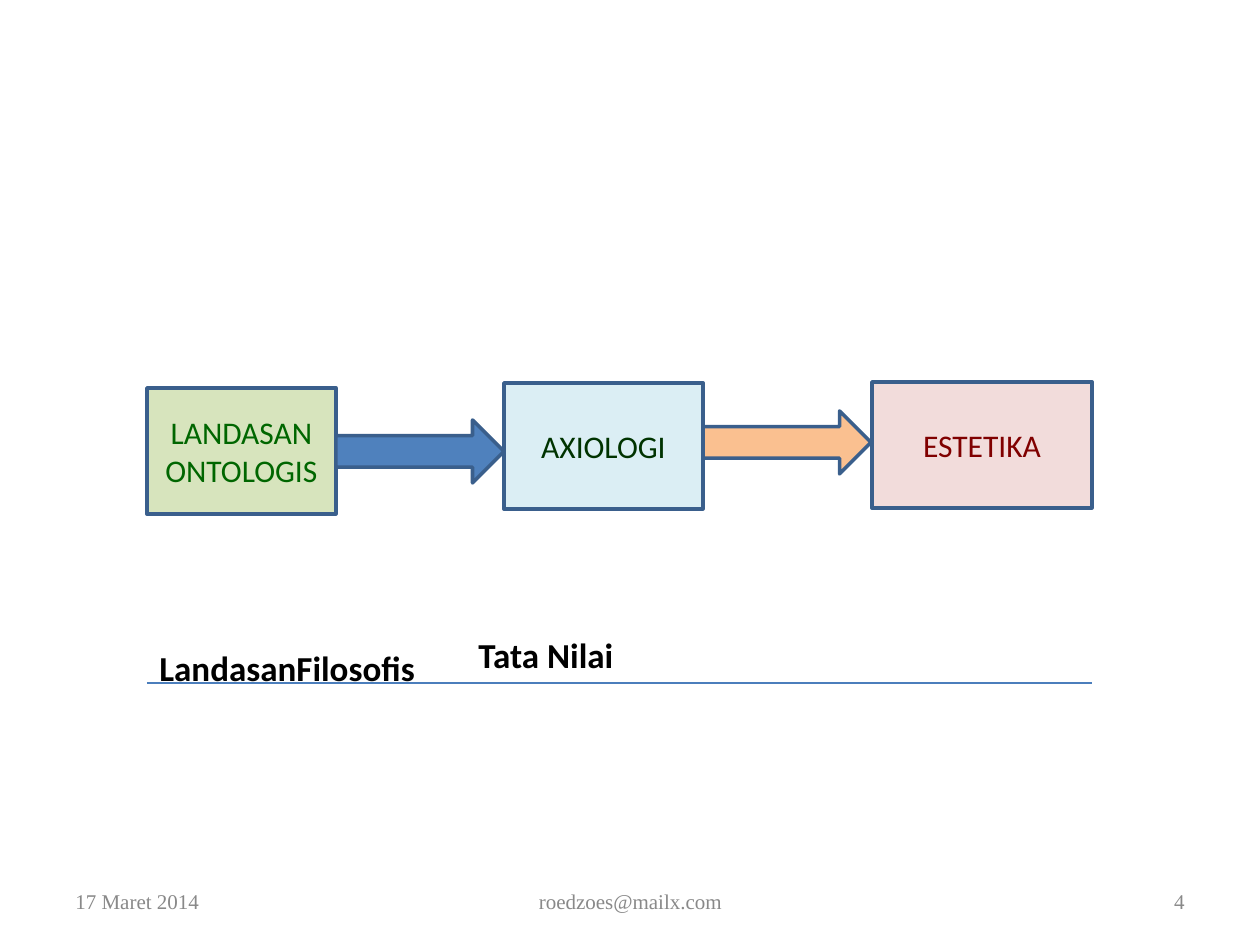
"""Build the slide on the ontological, axiological and aesthetic foundations."""
from lxml.etree import SubElement
from pptx import Presentation
from pptx.dml.color import RGBColor
from pptx.enum.shapes import MSO_CONNECTOR, MSO_SHAPE
from pptx.enum.text import MSO_ANCHOR, MSO_AUTO_SIZE, PP_ALIGN
from pptx.oxml.ns import qn
from pptx.util import Emu, Pt

PX = 914400 / 126
OUTLINE = RGBColor(0x3A, 0x5F, 0x8C)
RULE = RGBColor(0x4B, 0x7E, 0xBC)
BLUE = RGBColor(0x4F, 0x81, 0xBD)
ORANGE = RGBColor(0xFA, 0xC0, 0x90)
PALE_GREEN = RGBColor(0xD7, 0xE4, 0xBD)
PALE_BLUE = RGBColor(0xDB, 0xEE, 0xF4)
PALE_RED = RGBColor(0xF2, 0xDC, 0xDB)
GREEN = RGBColor(0x00, 0x66, 0x00)
DARK_GREEN = RGBColor(0x00, 0x33, 0x00)
MAROON = RGBColor(0x80, 0x00, 0x00)
BLACK = RGBColor(0x00, 0x00, 0x00)
GRAY = RGBColor(0x89, 0x89, 0x89)


def px(*lengths):
    return [Emu(round(length * PX)) for length in lengths]


def write(holder, text, font_name, size, color, align, bold=False):
    paragraph = holder.text_frame.paragraphs[0]
    paragraph.text = text
    paragraph.alignment = align
    font = paragraph.font
    font.name, font.size, font.bold = font_name, Pt(size), bold
    font.color.rgb = color


deck = Presentation()
deck.slide_width, deck.slide_height = px(1260, 945)
slide = deck.slides.add_slide(deck.slide_layouts[6])
shapes = slide.shapes

stages = [
    ("LANDASAN ONTOLOGIS", 147, 388, 189, PALE_GREEN, GREEN),
    ("AXIOLOGI", 504, 383, 199, PALE_BLUE, DARK_GREEN),
    ("ESTETIKA", 872, 382, 220, PALE_RED, MAROON),
]
flow = [(MSO_SHAPE.RECTANGLE, left, top, width, 126, fill, text, color)
        for text, left, top, width, fill, color in stages]
flow += [
    (MSO_SHAPE.RIGHT_ARROW, 336, 420, 168, 63, BLUE, None, None),
    (MSO_SHAPE.RIGHT_ARROW, 703, 411, 168, 63, ORANGE, None, None),
]
for preset, left, top, width, height, fill, text, color in flow:
    step = shapes.add_shape(preset, *px(left, top, width, height))
    step.shadow.inherit = False
    step.fill.solid()
    step.fill.fore_color.rgb = fill
    step.line.color.rgb = OUTLINE
    step.line.width = Pt(2)
    if text:
        step.text_frame.vertical_anchor = MSO_ANCHOR.MIDDLE
        write(step, text, "Calibri", 18, color, PP_ALIGN.CENTER)

baseline = shapes.add_connector(MSO_CONNECTOR.STRAIGHT, *px(147, 683, 1092, 683))
baseline.line.color.rgb = RULE
baseline.line.width = Pt(0.75)
SubElement(baseline._element.spPr, qn("a:effectLst"))

for text, left, top, width in [
    ("LandasanFilosofis", 147, 640, 284),
    ("Tata Nilai", 466, 627, 161),
]:
    caption = shapes.add_textbox(*px(left, top, width, 55))
    caption.text_frame.word_wrap = False
    caption.text_frame.auto_size = MSO_AUTO_SIZE.SHAPE_TO_FIT_TEXT
    write(caption, text, "Calibri", 20, BLACK, PP_ALIGN.LEFT, bold=True)

for text, left, width, align in [
    ("17 Maret 2014", 63, 294, PP_ALIGN.LEFT),
    ("4", 903, 294, PP_ALIGN.RIGHT),
    ("roedzoes@mailx.com", 431, 399, PP_ALIGN.CENTER),
]:
    footer = shapes.add_textbox(*px(left, 876, width, 50))
    footer.text_frame.word_wrap = True
    footer.text_frame.vertical_anchor = MSO_ANCHOR.MIDDLE
    write(footer, text, "Times New Roman", 12, GRAY, align)

deck.save("out.pptx")
